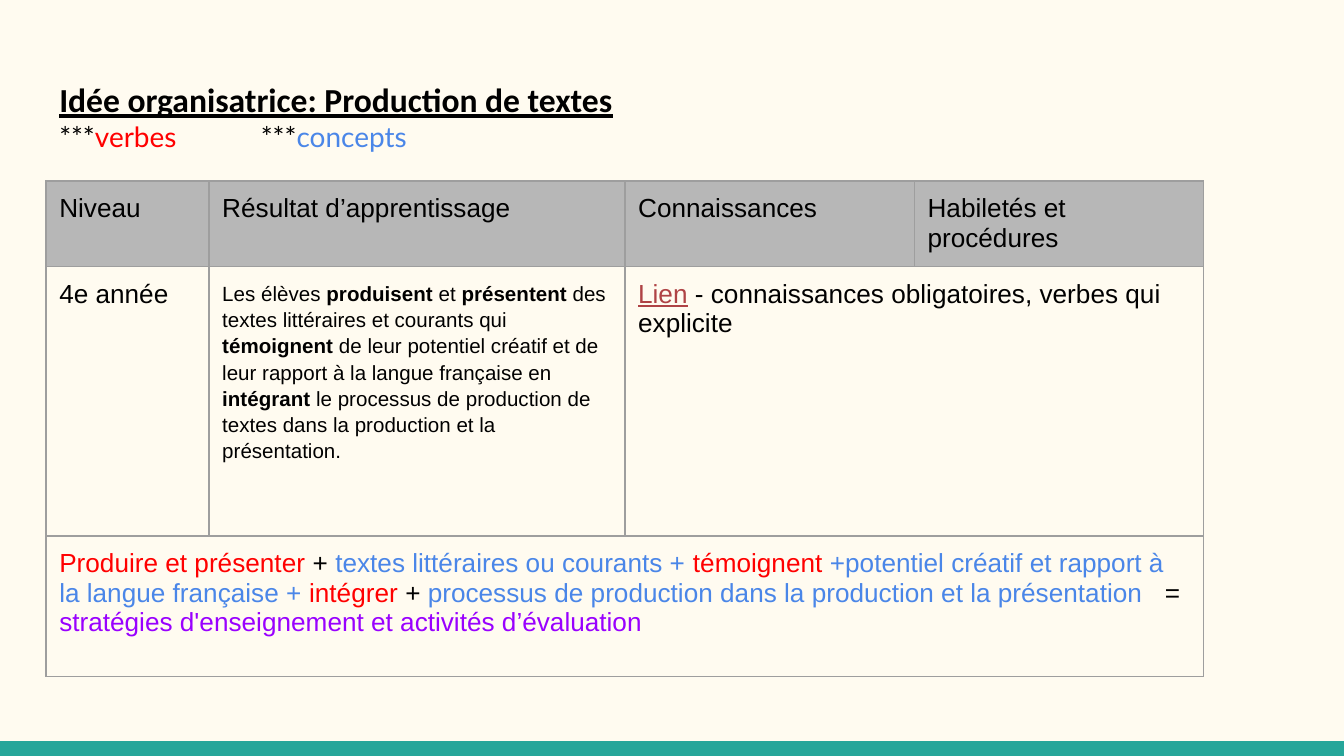
from typing import NamedTuple

from lxml import etree
from pptx import Presentation
from pptx.dml.color import RGBColor
from pptx.enum.shapes import MSO_SHAPE
from pptx.enum.text import MSO_ANCHOR, MSO_AUTO_SIZE, PP_ALIGN
from pptx.oxml.ns import qn
from pptx.util import Cm, Pt

RECTANGLE = MSO_SHAPE.RECTANGLE
TOP = MSO_ANCHOR.TOP
LEFT = PP_ALIGN.LEFT
NO_AUTOFIT = MSO_AUTO_SIZE.NONE
TITLE_ONLY = 5

COLORS = {
    "cream": "FFFBF0",
    "teal": "26A69A",
    "black": "000000",
    "verb": "FF0000",
    "concept": "4A86E8",
    "strategy": "9900FF",
    "link": "AF4345",
    "header": "B7B7B7",
    "border": "9E9E9E",
}
INSET = Cm(0.25)
LEFT_EDGE = Cm(0.87)
COLUMN_WIDTHS = [Cm(3.08), Cm(7.86), Cm(5.47), Cm(5.47)]
ROW_HEIGHTS = [Cm(1.6), Cm(5.1), Cm(2.66)]


class Piece(NamedTuple):
    text: str
    color: str = "black"
    bold: bool = False
    underline: bool = False


class Entry(NamedTuple):
    row: int
    column: int
    pieces: list[Piece]
    span: int = 1
    size: float = 14
    line_spacing: float = 1.0
    fill: str | None = None


HEADERS = ["Niveau", "Résultat d’apprentissage", "Connaissances", "Habiletés et procédures"]
OUTCOME = [
    Piece("Les élèves "),
    Piece("produisent ", bold=True),
    Piece("et "),
    Piece("présentent", bold=True),
    Piece(" des textes littéraires et courants qui "),
    Piece("témoignent", bold=True),
    Piece(" de leur potentiel créatif et de leur rapport à la langue française en "),
    Piece("intégrant", bold=True),
    Piece(" le processus de production de textes dans la production et la présentation."),
]
KNOWLEDGE = [
    Piece("Lien", "link", underline=True),
    Piece(" - connaissances obligatoires, verbes qui explicite"),
]
SUMMARY = [
    Piece("Produire et présenter", "verb"),
    Piece(" + "),
    Piece("textes littéraires ou courants + ", "concept"),
    Piece("témoignent ", "verb"),
    Piece("+potentiel créatif et rapport à la langue française + ", "concept"),
    Piece("intégrer ", "verb"),
    Piece("+"),
    Piece(" processus de production dans la production et la présentation  ", "concept"),
    Piece(" = "),
    Piece("stratégies d'enseignement et activités d’évaluation", "strategy"),
]
ENTRIES = [
    *(Entry(0, column, [Piece(text)], fill="header") for column, text in enumerate(HEADERS)),
    Entry(1, 0, [Piece("4e année")]),
    Entry(1, 1, OUTCOME, size=11, line_spacing=1.15),
    Entry(1, 2, KNOWLEDGE, span=2),
    Entry(2, 0, SUMMARY, span=4),
]
LEGEND = [
    Piece("***"),
    Piece("verbes", "verb"),
    Piece("\t\t***"),
    Piece("concepts", "concept"),
]


def rgb(name: str) -> RGBColor:
    return RGBColor.from_string(COLORS[name])


def write(para, pieces: list[Piece], *, font: str, size: float, line_spacing: float = 1.0) -> None:
    para.alignment = LEFT
    para.line_spacing = line_spacing
    para.space_before = Pt(0)
    for piece in pieces:
        span = para.add_run()
        span.text = piece.text
        span.font.name = font
        span.font.size = Pt(size)
        span.font.bold = piece.bold
        span.font.underline = piece.underline
        span.font.color.rgb = rgb(piece.color)


def set_insets(target) -> None:
    """Apply the shared inset to a text frame or a table cell."""
    target.margin_left = target.margin_right = INSET
    target.margin_top = target.margin_bottom = INSET


def add_borders(cell) -> None:
    properties = cell._tc.get_or_add_tcPr()
    for index, side in enumerate(("lnL", "lnR", "lnT", "lnB")):
        line = etree.Element(qn(f"a:{side}"), w=str(Pt(0.75)))
        fill = etree.SubElement(line, qn("a:solidFill"))
        etree.SubElement(fill, qn("a:srgbClr"), val=COLORS["border"])
        properties.insert(index, line)


def add_bottom_bar(slide, deck) -> None:
    height = Cm(0.28)
    bar = slide.shapes.add_shape(RECTANGLE, 0, deck.slide_height - height, deck.slide_width, height)
    bar.shadow.inherit = False
    bar.fill.solid()
    bar.fill.fore_color.rgb = rgb("teal")
    bar.line.fill.background()


def fill_title(title) -> None:
    title.left, title.top, title.width, title.height = LEFT_EDGE, Cm(1.24), Cm(23.67), Cm(1.7)
    box = title.text_frame
    box.word_wrap = True
    box.auto_size = NO_AUTOFIT
    box.vertical_anchor = TOP
    set_insets(box)
    heading = Piece("Idée organisatrice: Production de textes", bold=True, underline=True)
    write(box.paragraphs[0], [heading], font="Calibri", size=18)
    write(box.add_paragraph(), LEGEND, font="Lato", size=15)


def add_outcome_table(slide) -> None:
    table = slide.shapes.add_table(
        len(ROW_HEIGHTS), len(COLUMN_WIDTHS), LEFT_EDGE, Cm(3.42),
        sum(COLUMN_WIDTHS), sum(ROW_HEIGHTS),
    ).table
    table.first_row = table.horz_banding = False
    for column, width in zip(table.columns, COLUMN_WIDTHS):
        column.width = width
    for row, height in zip(table.rows, ROW_HEIGHTS):
        row.height = height
    for cell in table.iter_cells():
        set_insets(cell)
        cell.fill.background()
        add_borders(cell)
    for entry in ENTRIES:
        cell = table.cell(entry.row, entry.column)
        if entry.span > 1:
            cell.merge(table.cell(entry.row, entry.column + entry.span - 1))
        if entry.fill:
            cell.fill.solid()
            cell.fill.fore_color.rgb = rgb(entry.fill)
        write(cell.text_frame.paragraphs[0], entry.pieces, font="Arial",
              size=entry.size, line_spacing=entry.line_spacing)


def main() -> None:
    deck = Presentation()
    deck.slide_width, deck.slide_height = Cm(25.4), Cm(14.29)
    slide = deck.slides.add_slide(deck.slide_layouts[TITLE_ONLY])
    slide.background.fill.solid()
    slide.background.fill.fore_color.rgb = rgb("cream")
    add_bottom_bar(slide, deck)
    fill_title(slide.shapes.title)
    add_outcome_table(slide)
    deck.save("out.pptx")


if __name__ == "__main__":
    main()
